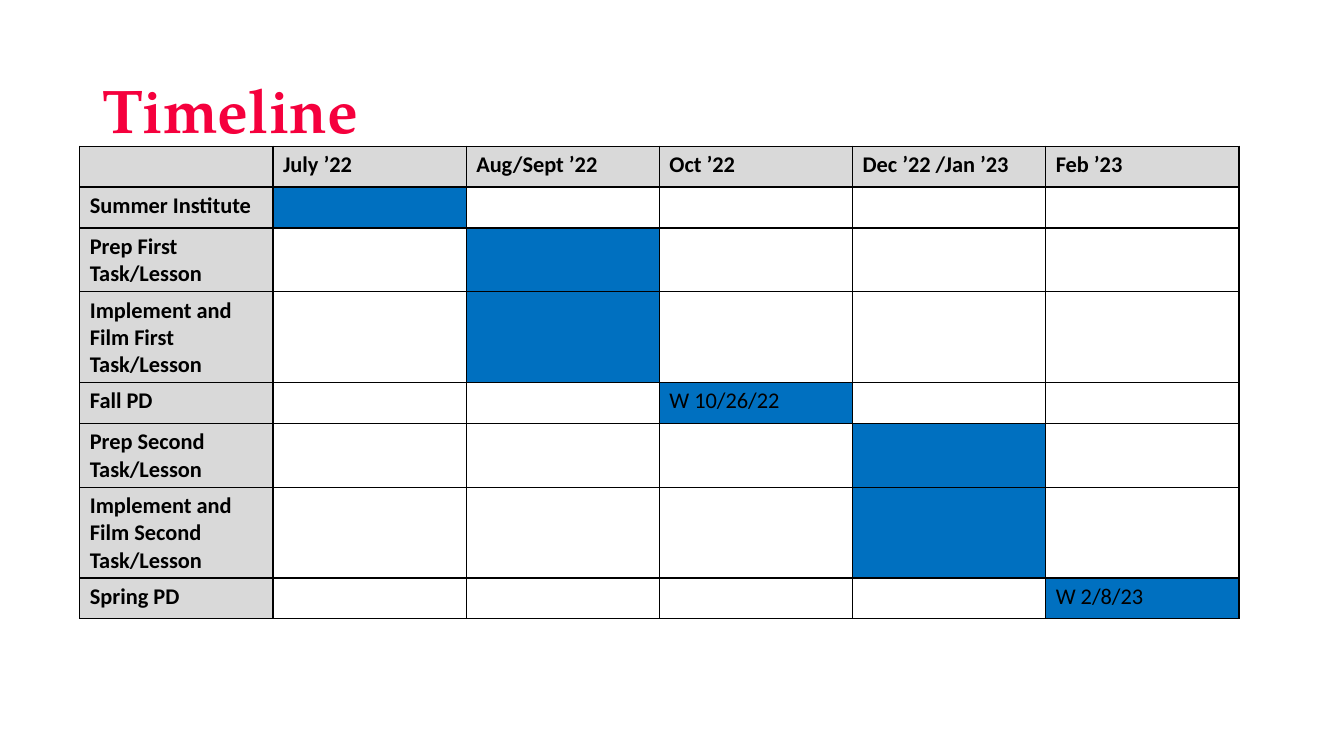
from dataclasses import dataclass

from lxml.etree import SubElement
from pptx import Presentation
from pptx.dml.color import RGBColor
from pptx.enum.text import MSO_ANCHOR
from pptx.oxml.ns import qn
from pptx.util import Pt

COLORS = {
    "title": "F5003D",
    "text": "000000",
    "border": "000000",
    "heading": "D9D9D9",
    "active": "0070C0",
}
BODY_FONT = "Calibri"
TITLE_FONT = "TeX Gyre Pagella"
COLUMN_WIDTH = 138
ROW_HEIGHT = 29.2


@dataclass
class Activity:
    name: str
    period: int  # index into PERIODS
    date: str = ""


PERIODS = ["July ’22", "Aug/Sept ’22", "Oct ’22", "Dec ’22 /Jan ’23", "Feb ’23"]
ACTIVITIES = [
    Activity("Summer Institute", 0),
    Activity("Prep First Task/Lesson", 1),
    Activity("Implement and Film First Task/Lesson", 1),
    Activity("Fall PD", 2, "W 10/26/22"),
    Activity("Prep Second Task/Lesson", 3),
    Activity("Implement and Film Second Task/Lesson", 3),
    Activity("Spring PD", 4, "W 2/8/23"),
]


def add_run(paragraph, text: str, font: str, size: float, color: str, bold: bool) -> None:
    run = paragraph.add_run()
    run.text = text
    run.font.name = font
    run.font.size = Pt(size)
    run.font.bold = bold
    run.font.color.rgb = RGBColor.from_string(COLORS[color])


def add_borders(cell) -> None:
    properties = cell._tc.get_or_add_tcPr()
    for position, side in enumerate(("a:lnL", "a:lnR", "a:lnT", "a:lnB")):
        line = SubElement(properties, qn(side), w=str(Pt(1)))
        fill = SubElement(line, qn("a:solidFill"))
        SubElement(fill, qn("a:srgbClr"), val=COLORS["border"])
        properties.insert(position, line)  # borders come before the fill


def style_cell(cell, text: str = "", fill: str = "", bold: bool = False) -> None:
    if fill:
        cell.fill.solid()
        cell.fill.fore_color.rgb = RGBColor.from_string(COLORS[fill])
    else:
        cell.fill.background()
    if text:
        add_run(cell.text_frame.paragraphs[0], text, BODY_FONT, 16, "text", bold)
    add_borders(cell)


def add_title(slide, text: str) -> None:
    box = slide.shapes.add_textbox(Pt(66), Pt(28.75), Pt(828), Pt(104.4))
    frame = box.text_frame
    frame.word_wrap = True
    frame.vertical_anchor = MSO_ANCHOR.MIDDLE
    paragraph = frame.paragraphs[0]
    paragraph.line_spacing = 0.9
    add_run(paragraph, text, TITLE_FONT, 44, "title", True)


def add_timeline(slide) -> None:
    row_count, column_count = len(ACTIVITIES) + 1, len(PERIODS) + 1
    table = slide.shapes.add_table(
        row_count, column_count, Pt(57), Pt(104.4),
        Pt(COLUMN_WIDTH * column_count), Pt(ROW_HEIGHT * row_count),
    ).table
    table.first_row = False
    table.horz_banding = False
    for column in table.columns:
        column.width = Pt(COLUMN_WIDTH)
    for row in table.rows:
        row.height = Pt(ROW_HEIGHT)

    # Header row
    for column, heading in enumerate(["", *PERIODS]):
        style_cell(table.cell(0, column), heading, "heading", True)

    # One row per activity, with its period filled
    for row, activity in enumerate(ACTIVITIES, start=1):
        style_cell(table.cell(row, 0), activity.name, "heading", True)
        for period in range(len(PERIODS)):
            cell = table.cell(row, period + 1)
            if period == activity.period:
                style_cell(cell, activity.date, "active")
            else:
                style_cell(cell)


def main() -> None:
    presentation = Presentation()
    presentation.slide_width = Pt(960)
    presentation.slide_height = Pt(540)
    slide = presentation.slides.add_slide(presentation.slide_layouts[6])
    add_title(slide, "Timeline")
    add_timeline(slide)
    presentation.save("out.pptx")


if __name__ == "__main__":
    main()
